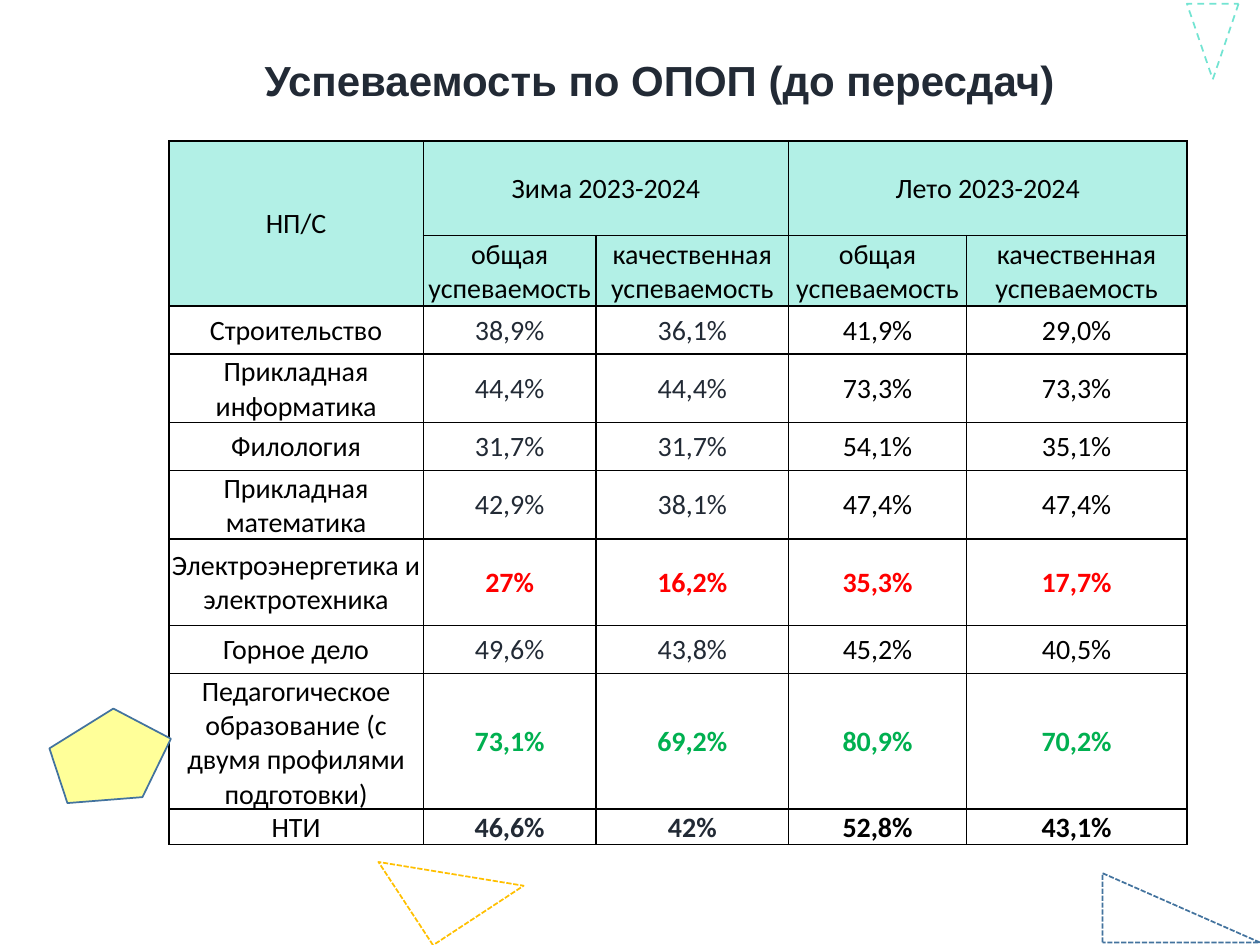
from dataclasses import dataclass
from typing import Optional

from lxml import etree
from pptx import Presentation
from pptx.dml.color import RGBColor
from pptx.enum.dml import MSO_LINE
from pptx.enum.shapes import MSO_SHAPE
from pptx.enum.text import MSO_ANCHOR, MSO_AUTO_SIZE, PP_ALIGN
from pptx.oxml.ns import qn
from pptx.util import Inches, Pt

COLORS = {
    "black": "000000", "dark": "222A35", "white": "FFFFFF", "mint": "B2F0E6",
    "red": "FF0000", "green": "00B050", "yellow": "FFFF99", "blue": "43739E",
    "teal": "73E4D2", "amber": "FFC000",
}


@dataclass
class ProgramRow:
    name: str
    values: tuple[str, str, str, str]
    height: float = 0.38
    accent: Optional[str] = None
    bold: bool = False
    anchor: MSO_ANCHOR = MSO_ANCHOR.MIDDLE


@dataclass
class Ornament:
    kind: MSO_SHAPE
    box: tuple[float, float, float, float]
    line: str
    rotation: float = 0
    fill: Optional[str] = None
    dash: Optional[MSO_LINE] = None


TERMS = ("Зима 2023-2024", "Лето 2023-2024")
MEASURES = ("общая успеваемость", "качественная успеваемость")
COL_WIDTHS = (2.02, 1.37, 1.53, 1.41, 1.75)
HEADER_HEIGHTS = (0.75, 0.56)
PROGRAMS = [
    ProgramRow("Строительство", ("38,9%", "36,1%", "41,9%", "29,0%")),
    ProgramRow("Прикладная информатика", ("44,4%", "44,4%", "73,3%", "73,3%")),
    ProgramRow("Филология", ("31,7%", "31,7%", "54,1%", "35,1%")),
    ProgramRow("Прикладная математика", ("42,9%", "38,1%", "47,4%", "47,4%")),
    ProgramRow("Электроэнергетика и электротехника",
               ("27%", "16,2%", "35,3%", "17,7%"), 0.69, "red", True),
    ProgramRow("Горное дело", ("49,6%", "43,8%", "45,2%", "40,5%")),
    ProgramRow("Педагогическое образование (с двумя профилями подготовки)",
               ("73,1%", "69,2%", "80,9%", "70,2%"), 0.85, "green", True),
    ProgramRow("НТИ", ("46,6%", "42%", "52,8%", "43,1%"), 0.28,
               bold=True, anchor=MSO_ANCHOR.BOTTOM),
]
ORNAMENTS = [
    Ornament(MSO_SHAPE.REGULAR_PENTAGON, (0.54, 5.54, 0.74, 0.94), "blue", 71.8, "yellow"),
    Ornament(MSO_SHAPE.ISOSCELES_TRIANGLE, (9.42, 0.03, 0.41, 0.6), "teal", 180, "white",
             MSO_LINE.DASH),
    Ornament(MSO_SHAPE.RIGHT_TRIANGLE, (8.75, 6.93, 1.25, 0.55), "blue",
             dash=MSO_LINE.SQUARE_DOT),
    Ornament(MSO_SHAPE.RIGHT_TRIANGLE, (3.15, 6.54, 0.86, 0.79), "amber", 326.7,
             dash=MSO_LINE.SQUARE_DOT),
]


def rgb(name: str) -> RGBColor:
    return RGBColor.from_string(COLORS[name])


def add_borders(cell) -> None:
    """Put a thin black line on all four sides; lines must precede the fill."""
    tc_pr = cell._tc.get_or_add_tcPr()
    for i, side in enumerate(("lnL", "lnR", "lnT", "lnB")):
        ln = etree.Element(qn(f"a:{side}"), w=str(Pt(1)))
        fill = etree.SubElement(ln, qn("a:solidFill"))
        etree.SubElement(fill, qn("a:srgbClr"), val=COLORS["black"])
        tc_pr.insert(i, ln)


def write_cell(cell, text: str, color: str = "black", bold: bool = False,
               anchor: MSO_ANCHOR = MSO_ANCHOR.MIDDLE) -> None:
    cell.vertical_anchor = anchor
    p = cell.text_frame.paragraphs[0]
    p.text = text
    p.alignment = PP_ALIGN.CENTER
    p.font.name, p.font.size, p.font.bold = "Calibri", Pt(16), bold
    p.font.color.rgb = rgb(color)


def add_results_table(s) -> None:
    heights = [*HEADER_HEIGHTS, *(row.height for row in PROGRAMS)]
    table = s.shapes.add_table(len(heights), len(COL_WIDTHS), Inches(1.34), Inches(1.12),
                               Inches(sum(COL_WIDTHS)), Inches(sum(heights))).table
    for column, width in zip(table.columns, COL_WIDTHS):
        column.width = Inches(width)
    for r, (row, height) in enumerate(zip(table.rows, heights)):
        row.height = Inches(height)
        for cell in row.cells:
            cell.margin_left = cell.margin_right = cell.margin_top = Inches(0.01)
            cell.margin_bottom = 0
            cell.fill.solid()
            cell.fill.fore_color.rgb = rgb("mint" if r < len(HEADER_HEIGHTS) else "white")
            add_borders(cell)

    table.cell(0, 0).merge(table.cell(1, 0))
    write_cell(table.cell(0, 0), "НП/С")
    for t, term in enumerate(TERMS):
        first = 1 + t * len(MEASURES)
        table.cell(0, first).merge(table.cell(0, first + 1))
        write_cell(table.cell(0, first), term)
        for m, measure in enumerate(MEASURES):
            write_cell(table.cell(1, first + m), measure)

    for r, row in enumerate(PROGRAMS, len(HEADER_HEIGHTS)):
        write_cell(table.cell(r, 0), row.name)
        for c, value in enumerate(row.values, 1):
            color = row.accent or ("dark" if c <= len(MEASURES) else "black")
            write_cell(table.cell(r, c), value, color, row.bold, row.anchor)


def add_title(s) -> None:
    sp = s.shapes.title
    sp.left, sp.top, sp.width, sp.height = map(Inches, (0.47, 0.37, 9.53, 0.52))
    tf = sp.text_frame
    tf.word_wrap = True
    tf.auto_size = MSO_AUTO_SIZE.SHAPE_TO_FIT_TEXT
    p = tf.paragraphs[0]
    p.text = "Успеваемость по ОПОП (до пересдач)"
    p.alignment = PP_ALIGN.CENTER
    p.font.name, p.font.size, p.font.bold = "Arial", Pt(24), True
    p.font.color.rgb = rgb("dark")


def add_ornament(s, ornament: Ornament) -> None:
    sp = s.shapes.add_shape(ornament.kind, *map(Inches, ornament.box))
    sp.shadow.inherit = False
    sp.rotation = ornament.rotation
    if ornament.fill:
        sp.fill.solid()
        sp.fill.fore_color.rgb = rgb(ornament.fill)
    else:
        sp.fill.background()
    sp.line.color.rgb = rgb(ornament.line)
    sp.line.width = Pt(1)
    if ornament.dash:
        sp.line.dash_style = ornament.dash


def main() -> None:
    prs = Presentation()
    prs.slide_width, prs.slide_height = Inches(10), Inches(7.5)
    s = prs.slides.add_slide(prs.slide_layouts[5])
    add_results_table(s)
    add_title(s)
    for ornament in ORNAMENTS:
        add_ornament(s, ornament)
    prs.save("out.pptx")


if __name__ == "__main__":
    main()
